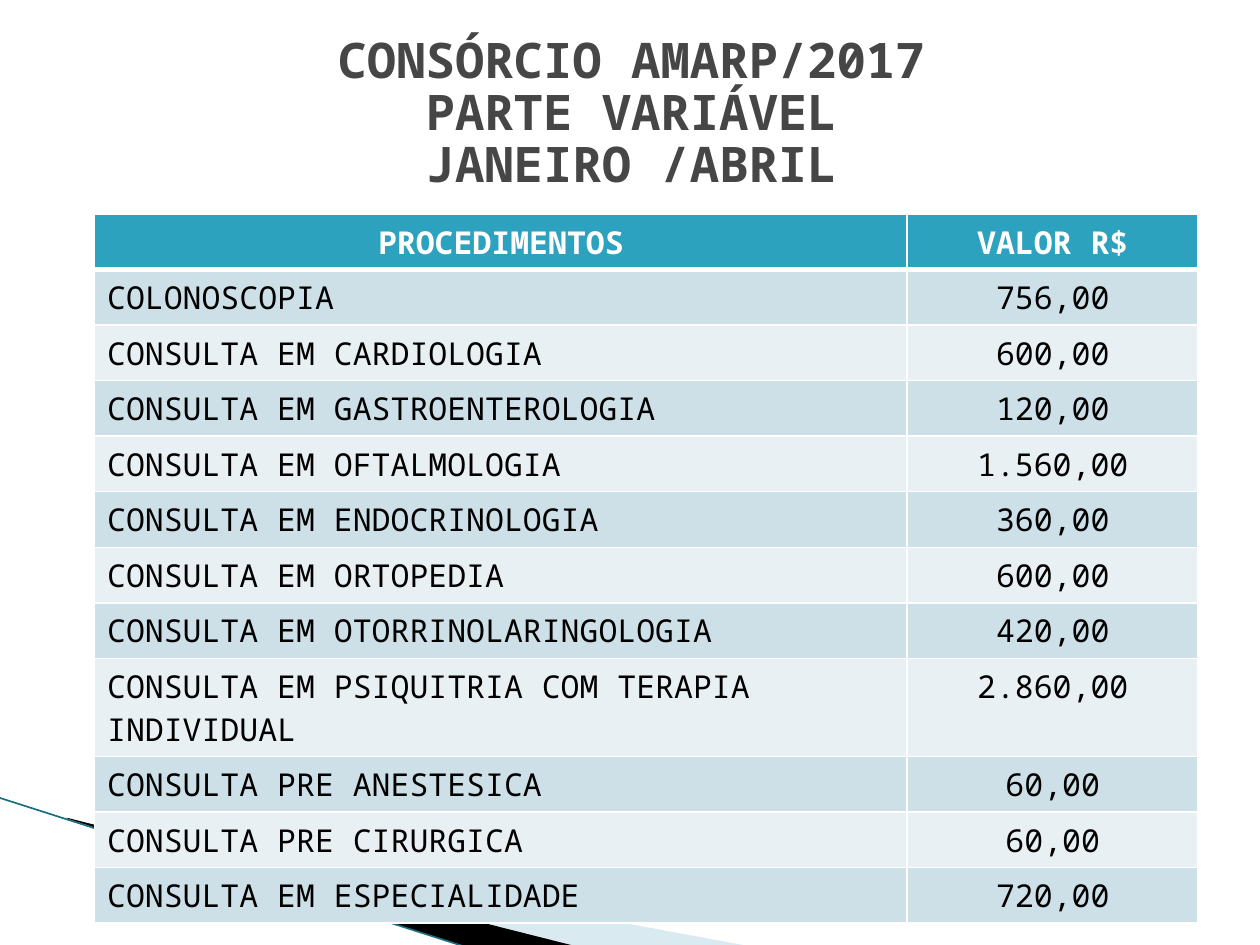
from lxml import etree
from pptx import Presentation
from pptx.dml.color import RGBColor
from pptx.enum.shapes import MSO_CONNECTOR
from pptx.enum.text import MSO_ANCHOR, MSO_AUTO_SIZE, PP_ALIGN
from pptx.oxml.ns import qn
from pptx.util import Inches, Pt

LEFT, CENTER = PP_ALIGN.LEFT, PP_ALIGN.CENTER
MIDDLE = MSO_ANCHOR.MIDDLE
NO_AUTOFIT = MSO_AUTO_SIZE.NONE
STRAIGHT = MSO_CONNECTOR.STRAIGHT
FONT = "Noto Sans Mono"


def color(value):
    return RGBColor.from_string(value)


def write_text(frame, text, size=18, fill="000000", bold=False, align=LEFT, spacing=None):
    frame.text = text
    paragraph = frame.paragraphs[0]
    paragraph.alignment = align
    paragraph.line_spacing = spacing
    for run in paragraph.runs:
        run.font.name = FONT
        run.font.size = Pt(size)
        run.font.bold = bold
        run.font.color.rgb = color(fill)


presentation = Presentation()
presentation.slide_width = Inches(10)
presentation.slide_height = Inches(7.5)
slide = presentation.slides.add_slide(presentation.slide_layouts[5])
slide.background.fill.solid()
slide.background.fill.fore_color.rgb = color("FFFFFF")

title = slide.shapes.title
title.left, title.top = Inches(0.51), Inches(0.21)
title.width, title.height = Inches(9), Inches(1.41)
title.text_frame.word_wrap = True
title.text_frame.auto_size = NO_AUTOFIT
title.text_frame.vertical_anchor = MIDDLE
write_text(title.text_frame, "CONSÓRCIO AMARP/2017\vPARTE VARIÁVEL\vJANEIRO /ABRIL",
           size=28, fill="464646", bold=True, align=CENTER, spacing=0.88)

wedges = [
    ([(0.55, 6.51), (5.95, 7.51), (4.56, 7.51), (0.55, 6.5)], "A0CBDC", 40),
    ([(0.53, 6.49), (4.57, 7.51), (3.72, 7.52), (0.54, 6.5)], "000000", 100),
]
for points, fill, opacity in wedges:
    corners = [(Inches(x), Inches(y)) for x, y in points]
    builder = slide.shapes.build_freeform(*corners[0])
    builder.add_line_segments(corners[1:], close=True)
    wedge = builder.convert_to_shape()
    wedge.shadow.inherit = False
    wedge.line.fill.background()
    wedge.fill.solid()
    wedge.fill.fore_color.rgb = color(fill)
    if opacity < 100:
        fill_color = wedge.fill._xPr.find(qn("a:solidFill"))[0]
        etree.SubElement(fill_color, qn("a:alpha"), val=str(opacity * 1000))

edge = slide.shapes.add_connector(STRAIGHT, Inches(-0.01), Inches(6.33), Inches(3.71), Inches(7.52))
edge.line.color.rgb = color("1A6E80")
edge.line.width = Pt(0.95)
etree.SubElement(edge._element.spPr, qn("a:effectLst"))

rows = [
    ("PROCEDIMENTOS", "VALOR R$"),
    ("COLONOSCOPIA", "756,00"),
    ("CONSULTA EM CARDIOLOGIA", "600,00"),
    ("CONSULTA EM GASTROENTEROLOGIA", "120,00"),
    ("CONSULTA EM OFTALMOLOGIA", "1.560,00"),
    ("CONSULTA EM ENDOCRINOLOGIA", "360,00"),
    ("CONSULTA EM ORTOPEDIA", "600,00"),
    ("CONSULTA EM OTORRINOLARINGOLOGIA", "420,00"),
    ("CONSULTA EM PSIQUITRIA COM TERAPIA INDIVIDUAL", "2.860,00"),
    ("CONSULTA PRE ANESTESICA", "60,00"),
    ("CONSULTA PRE CIRURGICA", "60,00"),
    ("CONSULTA EM ESPECIALIDADE", "720,00"),
]
TWO_LINE_ROW = 8
table = slide.shapes.add_table(len(rows), 2, Inches(0.75), Inches(1.7), Inches(8.76), Inches(4.6)).table
table.columns[0].width = Inches(6.45)
table.columns[1].width = Inches(2.31)
for row_index, texts in enumerate(rows):
    header = row_index == 0
    table.rows[row_index].height = Inches(0.64 if row_index == TWO_LINE_ROW else 0.36)
    band = "2DA2BF" if header else "CDE0E8" if row_index % 2 else "E8F0F4"
    for column_index, text in enumerate(texts):
        cell = table.cell(row_index, column_index)
        write_text(cell.text_frame, text, fill="FFFFFF" if header else "000000", bold=header,
                   align=CENTER if header or column_index else LEFT)
        properties = cell._tc.get_or_add_tcPr()
        for side in ("L", "R", "T", "B"):
            thick = (row_index, side) in ((0, "B"), (1, "T"))
            border = etree.SubElement(properties, qn(f"a:ln{side}"), w=str(Pt(3 if thick else 1)))
            border_fill = etree.SubElement(border, qn("a:solidFill"))
            etree.SubElement(border_fill, qn("a:srgbClr"), val="FFFFFF")
        cell.fill.solid()
        cell.fill.fore_color.rgb = color(band)

presentation.save("out.pptx")
